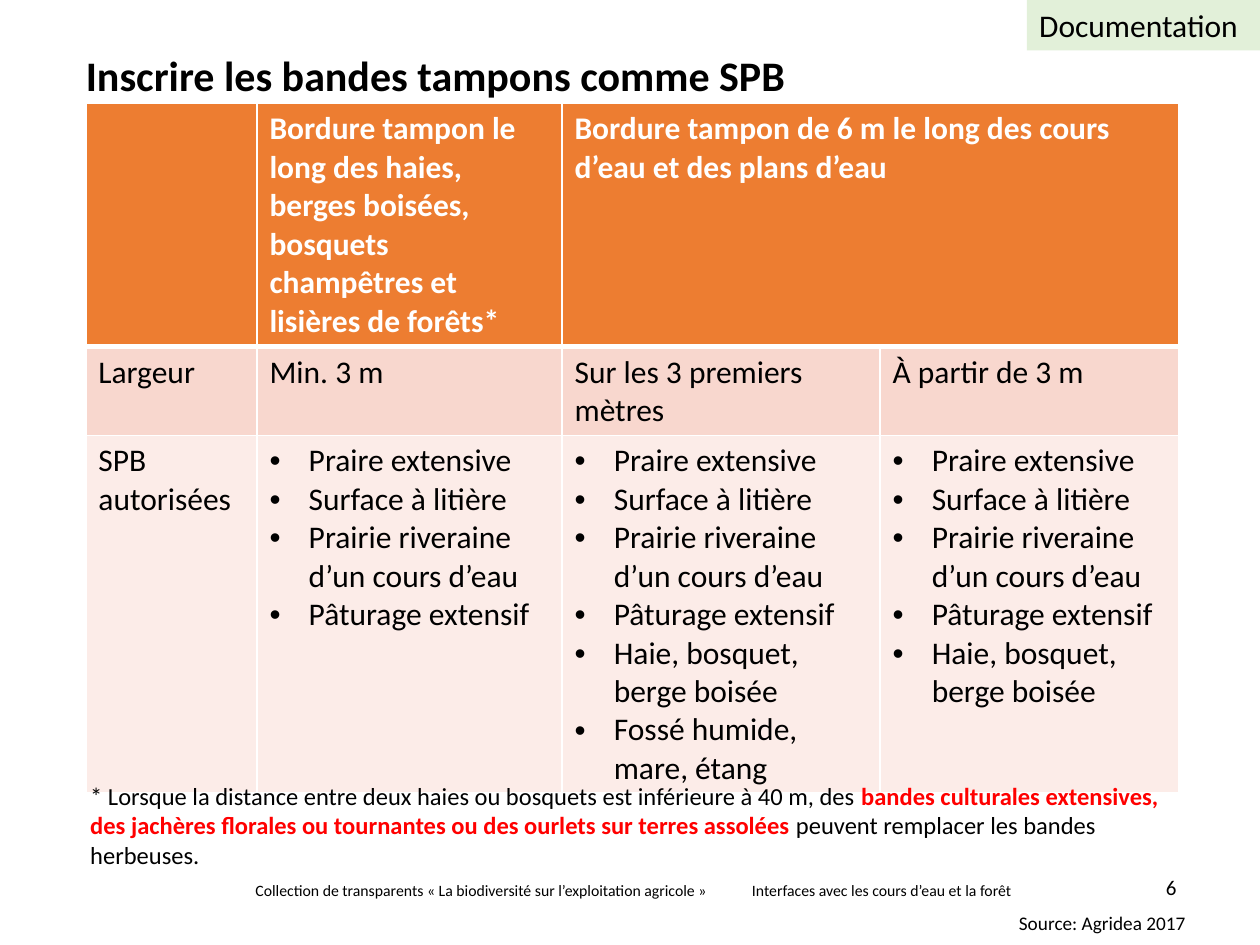
import pptx
import pptx.chart.data
import pptx.dml.color
import pptx.enum.shapes
import pptx.enum.text
import pptx.oxml
import pptx.oxml.ns
import pptx.util
from lxml import etree

Cm = pptx.util.Cm
Pt = pptx.util.Pt
ALIGN = pptx.enum.text.PP_ALIGN
ANCHOR = pptx.enum.text.MSO_ANCHOR
qn = pptx.oxml.ns.qn

COLORS = {
    "black": "000000", "white": "FFFFFF", "red": "FF0000", "green": "E2F0D9",
    "head": "ED7D31", "band": "F8D7CE", "pale": "FCECE8",
}


def shade(name):
    return pptx.dml.color.RGBColor.from_string(COLORS[name])


class Deck:
    """Holds the style and the current slide."""
    face = "Calibri"

    def __init__(self):
        self.prs = pptx.Presentation()
        self.prs.slide_width, self.prs.slide_height = Cm(25.4), Cm(19.05)
        self.slide = self.prs.slides.add_slide(self.prs.slide_layouts[5])

    def style(self, font, size, color="black", bold=False):
        font.name, font.size, font.bold = self.face, Pt(size), bold
        font.color.rgb = shade(color)

    def title(self, text, left, top, width, height):
        box = self.slide.shapes.title
        box.left, box.top, box.width, box.height = map(Cm, (left, top, width, height))
        frame = box.text_frame
        frame.text = text
        frame.auto_size = pptx.enum.text.MSO_AUTO_SIZE.NONE
        frame.vertical_anchor = ANCHOR.TOP
        frame.margin_left = frame.margin_right = 0
        frame.margin_top = frame.margin_bottom = 0
        par = frame.paragraphs[0]
        par.alignment, par.line_spacing = ALIGN.LEFT, 0.9
        self.style(par.font, 24, bold=True)

    def text(self, runs, left, top, width, height, size):
        """Runs are (text, color, bold) triples, or one plain string."""
        box = self.slide.shapes.add_textbox(*map(Cm, (left, top, width, height)))
        frame = box.text_frame
        frame.word_wrap = True
        par = frame.paragraphs[0]
        if isinstance(runs, str):
            par.text = runs
            self.style(par.font, size)
        else:
            for words, color, bold in runs:
                run = par.add_run()
                run.text = words
                self.style(run.font, size, color, bold)
        return frame

    def number(self, text, left, top, width, height):
        frame = self.text(text, left, top, width, height, 12)
        frame.margin_left = frame.margin_right = 0
        frame.vertical_anchor = ANCHOR.BOTTOM
        frame.paragraphs[0].alignment = ALIGN.RIGHT

    def label(self, text, left, top, width, height):
        box = self.slide.shapes.add_shape(
            pptx.enum.shapes.MSO_SHAPE.RECTANGLE, *map(Cm, (left, top, width, height)))
        box.shadow.inherit = False
        box.fill.solid()
        box.fill.fore_color.rgb = shade("green")
        box.line.fill.background()
        par = box.text_frame.paragraphs[0]
        par.text, par.alignment = text, ALIGN.LEFT
        self.style(par.font, 18)

    def border(self, cell, base):
        """Draws white cell borders; base is the width of the bottom one."""
        props = cell._tc.get_or_add_tcPr()
        for side, width in zip("LRTB", (1, 1, 1, base)):
            line = etree.SubElement(props, qn(f"a:ln{side}"), w=str(Pt(width)))
            fill = etree.SubElement(line, qn("a:solidFill"))
            etree.SubElement(fill, qn("a:srgbClr"), val=COLORS["white"])

    def bullet(self, par):
        props = par._p.get_or_add_pPr()
        props.set("marL", str(Cm(0.79)))
        props.set("indent", str(-Cm(0.79)))
        etree.SubElement(props, qn("a:buFont"), typeface="Arial")
        etree.SubElement(props, qn("a:buChar"), char="•")

    def cell(self, cell, words, fill, head):
        """Fills a cell with a string, or with a list as bullets."""
        self.border(cell, 3 if head else 1)
        cell.fill.solid()
        cell.fill.fore_color.rgb = shade(fill)
        lines = [words] if isinstance(words, str) else words
        cell.text = "\n".join(lines)
        for par in cell.text_frame.paragraphs:
            if lines is words:
                self.bullet(par)
            self.style(par.font, 18, "white" if head else "black", head)

    def table(self, rows, left, top, widths, heights, fills):
        grid = self.slide.shapes.add_table(
            len(rows), len(widths), Cm(left), Cm(top),
            Cm(sum(widths)), Cm(sum(heights))).table
        for col, width in zip(grid.columns, widths):
            col.width = Cm(width)
        for y, (row, height, fill) in enumerate(zip(rows, heights, fills)):
            grid.rows[y].height = Cm(height)
            for x, words in enumerate(row):
                self.cell(grid.cell(y, x), words, fill, y == 0)
        return grid


def main():
    deck = Deck()
    deck.text("Collection de transparents « La biodiversité sur l’exploitation agricole\u00a0»",
              4.9, 17.63, 9.8, 0.64, 9)
    deck.text("Interfaces avec les cours d’eau et la forêt", 14.91, 17.63, 6, 0.64, 9)
    deck.title("Inscrire les bandes tampons comme SPB", 1.73, 1.12, 21.97, 1.75)

    basic = ["Praire extensive", "Surface à litière",
             "Prairie riveraine d’un cours d’eau", "Pâturage extensif"]
    hedge = basic + ["Haie, bosquet, berge boisée"]
    rows = [
        ["", "Bordure tampon le long des haies, berges boisées, bosquets "
             "champêtres et lisières de forêts*",
         "Bordure tampon de 6 m le long des cours d’eau et des plans d’eau", ""],
        ["Largeur", "Min. 3 m", "Sur les 3 premiers mètres", "À partir de 3 m"],
        ["SPB autorisées", basic, hedge + ["Fossé humide, mare, étang"], hedge],
    ]
    grid = deck.table(rows, 1.73, 2.09, [3.45, 6.15, 6.41, 6.02],
                      [4.9, 1.79, 7.2], ["head", "band", "pale"])
    grid.cell(0, 2).merge(grid.cell(0, 3))

    deck.number("6", 21.51, 17.27, 2.21, 0.99)
    deck.text("Source: Agridea 2017", 20.29, 18.24, 4.04, 0.74, 11)
    deck.text([
        ("* Lorsque la distance entre deux haies ou bosquets est inférieure à 40 m, des ",
         "black", False),
        ("bandes culturales extensives, des jachères florales ou tournantes ou des "
         "ourlets sur terres assolées", "red", True),
        (" peuvent remplacer les bandes herbeuses.", "black", False),
    ], 1.57, 15.62, 22.23, 2.06, 14)
    deck.label("Documentation", 20.7, 0, 4.7, 1.02)
    deck.prs.save("out.pptx")


if __name__ == "__main__":
    main()
